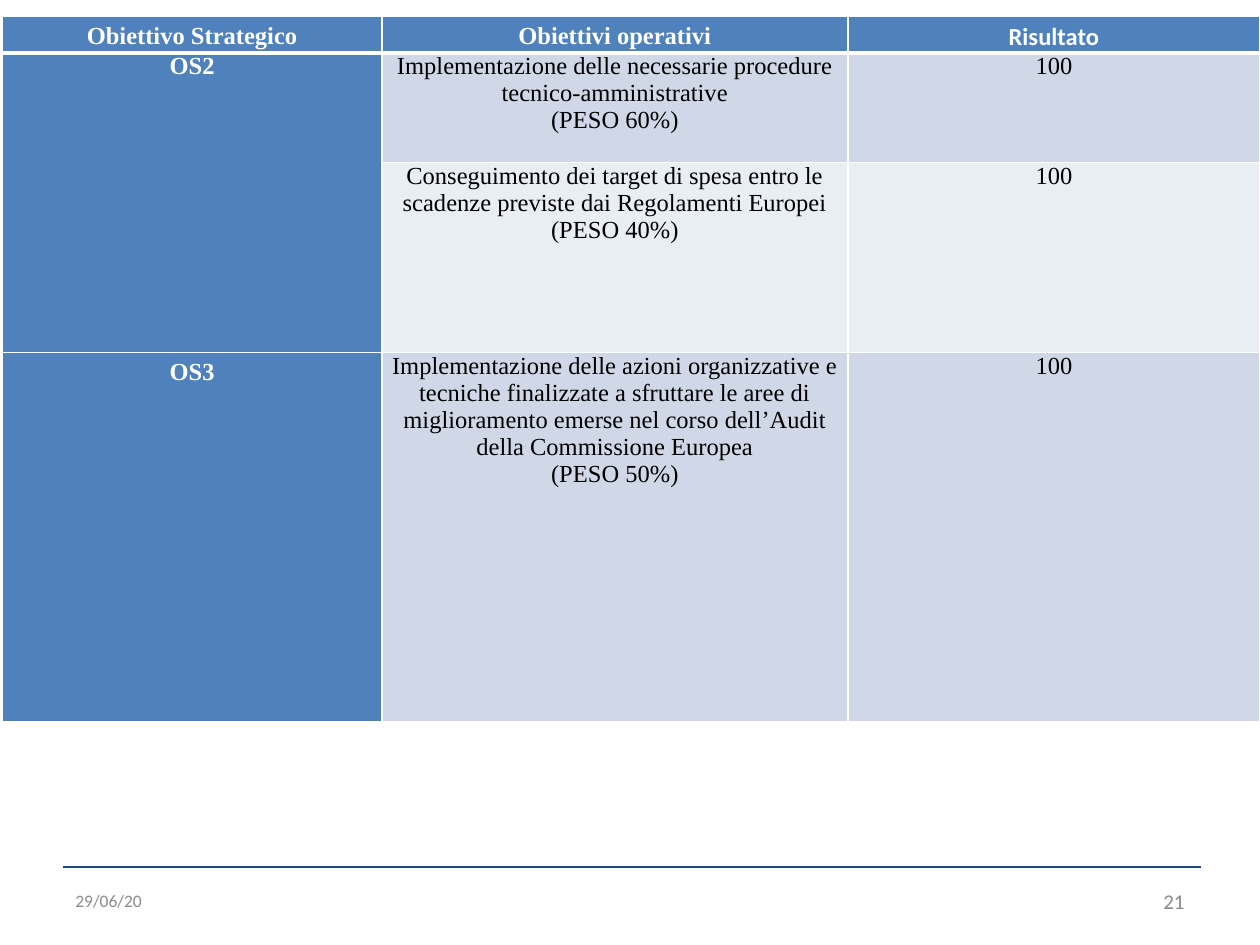
from copy import deepcopy

from lxml import etree
from pptx import Presentation
from pptx.dml.color import RGBColor
from pptx.enum.shapes import MSO_CONNECTOR
from pptx.enum.text import MSO_ANCHOR, PP_ALIGN
from pptx.oxml import parse_xml
from pptx.oxml.ns import nsdecls, qn
from pptx.util import Inches, Pt

LEFT, CENTER, RIGHT = PP_ALIGN.LEFT, PP_ALIGN.CENTER, PP_ALIGN.RIGHT
TOP, MIDDLE = MSO_ANCHOR.TOP, MSO_ANCHOR.MIDDLE
STRAIGHT = MSO_CONNECTOR.STRAIGHT

SERIF, SANS = "Times New Roman", "Calibri"
BLUE, NAVY, WHITE, BLACK = "4F81BD", "1F497D", "FFFFFF", "000000"
DARK, LIGHT = "D0D8E8", "E9EDF4"

COLS = [3.01, 3.7, 3.27]
ROWS = [0.29, 0.87, 1.51, 2.93]
BANDS = [BLUE, DARK, LIGHT, DARK]
CELLS = [
    ["Obiettivo Strategico", "Obiettivi operativi", "Risultato"],
    ["OS2", "Implementazione delle necessarie procedure "
     "tecnico-amministrative\n(PESO 60%)", "100"],
    ["", "Conseguimento dei target di spesa entro le scadenze previste "
     "dai Regolamenti Europei\n(PESO 40%)", "100"],
    ["OS3", "Implementazione delle azioni organizzative e tecniche "
     "finalizzate a sfruttare le aree di miglioramento emerse nel corso "
     "dell’Audit della Commissione Europea\n(PESO 50%)", "100"],
]


def color(code):
    return RGBColor.from_string(code)


def assign(item, values):
    for name, value in values.items():
        setattr(item, name, value)


def margins(x, y):
    return {"margin_left": Inches(x), "margin_right": Inches(x),
            "margin_top": Inches(y), "margin_bottom": Inches(y)}


class Deck:
    def __init__(self, wide, high):
        self.prs = Presentation()
        self.prs.slide_width, self.prs.slide_height = Inches(wide), Inches(high)
        self.slide = self.prs.slides.add_slide(self.prs.slide_layouts[6])
        self.shapes = self.slide.shapes

    def fill(self, para, text, ink, align=CENTER, **font):
        """Fill a paragraph; line breaks take the same format as the runs."""
        para.text = text
        para.alignment = align
        for run in para.runs:
            assign(run.font, font)
            run.font.color.rgb = color(ink)
        for gap in para._p.findall(qn("a:br")):
            gap.insert(0, deepcopy(para.runs[0]._r.rPr))

    def label(self, box, text, ink, size, align):
        frame = self.shapes.add_textbox(*map(Inches, box)).text_frame
        assign(frame, {"word_wrap": True, "vertical_anchor": MIDDLE})
        self.fill(frame.paragraphs[0], text, ink, align,
                  name=SANS, size=Pt(size))

    def rule(self, start, end, ink, width):
        line = self.shapes.add_connector(
            STRAIGHT, *map(Inches, (*start, *end)))
        line.line.color.rgb = color(ink)
        line.line.width = Pt(width)
        etree.SubElement(line._element.spPr, qn("a:effectLst"))

    def border(self, cell, base):
        """Draw white edges, with the bottom one base points wide."""
        props = cell._tc.get_or_add_tcPr()
        for spot, side in enumerate("LRTB"):
            width = Pt(base if side == "B" else 1)
            props.insert(spot, parse_xml(
                f'<a:ln{side} {nsdecls("a")} w="{width}"><a:solidFill>'
                f'<a:srgbClr val="{WHITE}"/></a:solidFill></a:ln{side}>'))

    def cell(self, cell, text, row, col):
        head, side = row == 0, col == 0
        cell.fill.solid()
        cell.fill.fore_color.rgb = color(BLUE if side else BANDS[row])
        self.border(cell, 3 if head else 1)
        cell.vertical_anchor = MIDDLE if head else TOP
        inset = (0.07, 0) if head else (0.1, 0.05) if text == "OS3" else (0, 0)
        assign(cell, margins(*inset))
        if not text:
            return
        para = cell.text_frame.paragraphs[0]
        if head:
            assign(para, {"line_spacing": 1.15, "space_after": Pt(10)})
        strong = head or side
        self.fill(para, text, WHITE if strong else BLACK, bold=strong,
                  size=Pt(14), name=SANS if text == "Risultato" else SERIF)

    def table(self, left, top):
        table = self.shapes.add_table(
            len(ROWS), len(COLS), Inches(left), Inches(top),
            Inches(sum(COLS)), Inches(sum(ROWS))).table
        for col, width in zip(table.columns, COLS):
            col.width = Inches(width)
        for row, height in zip(table.rows, ROWS):
            row.height = Inches(height)
        for r, texts in enumerate(CELLS):
            for c, text in enumerate(texts):
                self.cell(table.cell(r, c), text, r, c)
        table.cell(1, 0).merge(table.cell(2, 0))


def main():
    deck = Deck(10, 7.5)
    deck.rule((0.5, 6.88), (9.53, 6.88), NAVY, 1.5)
    deck.label((0.5, 6.95, 2.33, 0.4), "29/06/20", "8C8C8C", 10, LEFT)
    deck.label((7.17, 6.95, 2.33, 0.4), "21", "898989", 12, RIGHT)
    deck.table(0.02, 0.13)
    deck.prs.save("out.pptx")


if __name__ == "__main__":
    main()
